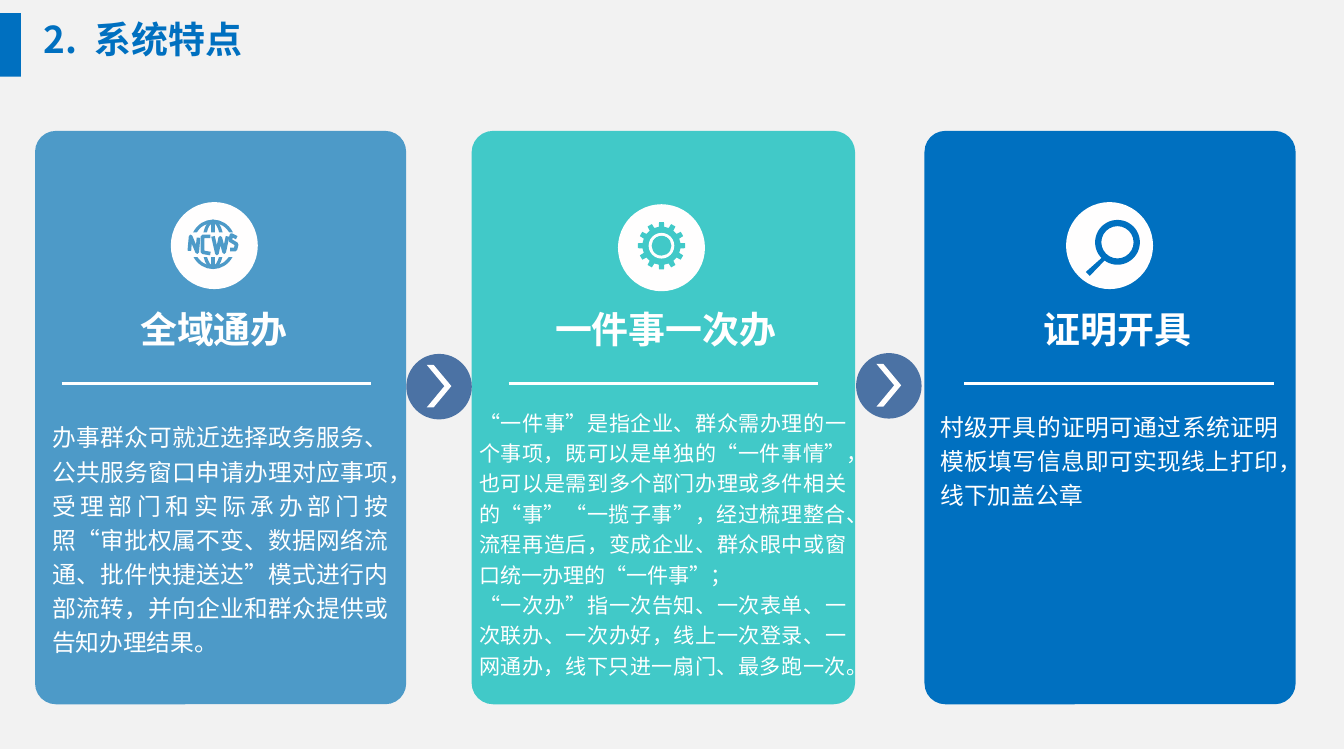
import math

import pptx
import pptx.dml.color
import pptx.enum.shapes
import pptx.enum.text
import pptx.oxml
import pptx.oxml.ns
import pptx.util

Pt = pptx.util.Pt
SHAPE = pptx.enum.shapes.MSO_SHAPE
ALIGN = pptx.enum.text.PP_ALIGN
FONT = "Noto Sans CJK SC"
COLOURS = {
    "background": "F2F2F2", "white": "FFFFFF", "disc": "FFFEFE", "arrow": "4B72A4",
    "sky": "4D9AC8", "teal": "41C9C8", "blue": "0070C0",
}
NEWS = [
    [(-18, 5), (-17, -6), (-12, 6), (-11, -5)],
    [(-2, -6), (-8, -6), (-8, 6), (-2, 7)],
    [(0, -6), (3, 7), (5.5, -5), (8.5, 6), (11, -6)],
    [(18, -5), (14, -7), (13, -3), (18, 0), (17, 4), (13, 4)],
]
HANDLE = [(-18, 20), (-15, 23), (-2, 9.5), (-4.5, 8)]


def rgb(name):
    return pptx.dml.color.RGBColor.from_string(COLOURS[name])


def paint(shape, fill=None, line=None, width=0):
    shape.shadow.inherit = False
    if fill:
        shape.fill.solid()
        shape.fill.fore_color.rgb = rgb(fill)
    else:
        shape.fill.background()
    if line:
        shape.line.color.rgb = rgb(line)
        shape.line.width = Pt(width)
    else:
        shape.line.fill.background()


def add_preset(slide, kind, left, top, width, height, fill, adjustment=None):
    shape = slide.shapes.add_shape(kind, Pt(left), Pt(top), Pt(width), Pt(height))
    if adjustment is not None:
        shape.adjustments[0] = adjustment
    paint(shape, fill)
    return shape


def add_circle(slide, x, y, radius, fill):
    return add_preset(slide, SHAPE.OVAL, x - radius, y - radius, 2 * radius, 2 * radius, fill)


def add_outline(slide, x, y, points, close):
    """Build a freeform from points given relative to (x, y)."""
    corners = [(Pt(x + dx), Pt(y + dy)) for dx, dy in points]
    builder = slide.shapes.build_freeform(*corners[0], scale=1.0)
    builder.add_line_segments(corners[1:], close=close)
    return builder.convert_to_shape()


def add_line(slide, x1, y1, x2, y2, colour, width):
    line = slide.shapes.add_connector(
        pptx.enum.shapes.MSO_CONNECTOR.STRAIGHT, Pt(x1), Pt(y1), Pt(x2), Pt(y2))
    line.line.color.rgb = rgb(colour)
    line.line.width = Pt(width)
    line._element.spPr.append(pptx.oxml.parse_xml(
        f'<a:effectLst {pptx.oxml.ns.nsdecls("a")}/>'))


def format_run(run, size, colour, bold=False):
    run.font.size = Pt(size)
    run.font.bold = bold
    run.font.color.rgb = rgb(colour)
    run.font.name = FONT
    run._r.get_or_add_rPr().append(pptx.oxml.parse_xml(
        f'<a:ea {pptx.oxml.ns.nsdecls("a")} typeface="{FONT}"/>'))


def add_text(slide, left, top, width, height, text, size, align, bold=False):
    box = slide.shapes.add_textbox(Pt(left), Pt(top), Pt(width), Pt(height))
    frame = box.text_frame
    frame.word_wrap = True
    frame.auto_size = pptx.enum.text.MSO_AUTO_SIZE.SHAPE_TO_FIT_TEXT
    frame.text = text
    for paragraph in frame.paragraphs:
        paragraph.alignment = align
        paragraph.line_spacing = 1.2
        format_run(paragraph.runs[0], size, "white", bold)


def globe_icon(slide, x, y, colour):
    x, y = x - 1, y - 1
    for half_width in (16, 7):
        ring = add_preset(slide, SHAPE.OVAL, x - half_width, y - 17.5, 2 * half_width, 35, None)
        paint(ring, line=colour, width=2.5)
    add_line(slide, x, y - 17, x, y + 17, colour, 2.5)
    add_preset(slide, SHAPE.RECTANGLE, x - 20, y - 9, 40, 18.5, "disc")
    for strokes in NEWS:
        paint(add_outline(slide, x, y, strokes, close=False), line=colour, width=2.75)


def gear_icon(slide, x, y, colour):
    y -= 1.5
    teeth = 12
    rim = []
    for tooth in range(teeth):
        for offset, radius in ((-8, 14.5), (-6, 18), (6, 18), (8, 14.5)):
            angle = math.radians(tooth * 360 / teeth + offset)
            rim.append((radius * math.sin(angle), -radius * math.cos(angle)))
    paint(add_outline(slide, x, y, rim, close=True), colour)
    add_circle(slide, x, y, 9.75, "disc")
    add_circle(slide, x, y, 7.5, colour)


def magnifier_icon(slide, x, y, colour):
    add_preset(slide, SHAPE.DONUT, x - 11, y - 19.5, 34, 34, colour, 0.14)
    paint(add_outline(slide, x, y, HANDLE, close=True), colour)


def feature_card(slide, box, colour, icon, disc, heading, heading_x, rule_x, body, body_box, size):
    """Draw one feature; inner places are relative to the card's top left corner."""
    left, top, width, height = box
    add_preset(slide, SHAPE.ROUNDED_RECTANGLE, *box, colour, 0.056)
    disc_x, disc_y = left + disc[0], top + disc[1]
    add_circle(slide, disc_x, disc_y, 33, "disc")
    icon(slide, disc_x, disc_y, colour)
    add_text(slide, left + heading_x - 115, top + 123, 230, 47.5, heading, 28, ALIGN.CENTER, True)
    add_line(slide, left + rule_x, top + 191.5, left + rule_x + 234.7, top + 191.5, "white", 2.25)
    body_x, body_y, body_width, body_height = body_box
    add_text(slide, left + body_x, top + body_y, body_width, body_height, body, size, ALIGN.JUSTIFY)


def step_arrow(slide, left, top):
    add_preset(slide, SHAPE.OVAL, left, top, 49.7, 49.7, "arrow")
    add_preset(slide, SHAPE.CHEVRON, left + 15.5, top + 8.25, 18.7, 32.4, "white", 0.72)


def slide_header(slide, left, top, width, height):
    add_preset(slide, SHAPE.RECTANGLE, 0, 10, 15.8, 48.2, "blue")
    title = slide.shapes.title
    title.left, title.top, title.width, title.height = Pt(left), Pt(top), Pt(width), Pt(height)
    frame = title.text_frame
    frame.margin_left = frame.margin_right = Pt(9.4)
    frame.margin_top = frame.margin_bottom = Pt(5)
    frame.vertical_anchor = pptx.enum.text.MSO_ANCHOR.MIDDLE
    paragraph = frame.paragraphs[0]
    paragraph.alignment = ALIGN.LEFT
    for part in ("2.", " ", "系统特点"):
        run = paragraph.add_run()
        run.text = part
        format_run(run, 28, "blue", True)
    paragraph.runs[1]._r.get_or_add_rPr().set("spc", "650")


def main():
    deck = pptx.Presentation()
    deck.slide_width, deck.slide_height = Pt(1019.5), Pt(568.1)
    slide = deck.slides.add_slide(deck.slide_layouts[5])
    slide.background.fill.solid()
    slide.background.fill.fore_color.rgb = rgb("background")
    slide_header(slide, 23.8, 8.6, 440, 41)

    card_top, card_height = 99.3, 434.9
    feature_card(
        slide, (26.6, card_top, 281.5, card_height), "sky", globe_icon, (136, 87),
        "全域通办", 135.7, 20.2,
        "办事群众可就近选择政务服务、公共服务窗口申请办理对应事项，受理部门和实际承办部门按照"
        "“审批权属不变、数据网络流通、批件快捷送达”模式进行内部流转，并向企业和群众提供或告知办理结果。",
        (5.8, 213.8, 269.3, 190), 18)
    feature_card(
        slide, (357.8, card_top, 290.9, card_height), "teal", gear_icon, (144, 88.6),
        "一件事一次办", 147.2, 28.1,
        "“一件事”是指企业、群众需办理的一个事项，既可以是单独的“一件事情”，也可以是需到多个部门办理或"
        "多件相关的“事”“一揽子事”，经过梳理整合、流程再造后，变成企业、群众眼中或窗口统一办理的“一件事”；\n"
        "“一次办”指一次告知、一次表单、一次联办、一次办好，线上一次登录、一网通办，线下只进一扇门、最多跑一次。",
        (-1.4, 204.5, 293, 216), 16)
    feature_card(
        slide, (701.3, card_top, 281.5, card_height), "blue", magnifier_icon, (140.4, 87),
        "证明开具", 146.5, 30.2,
        "村级开具的证明可通过系统证明模板填写信息即可实现线上打印，线下加盖公章",
        (5, 205.9, 270.7, 85.7), 18)
    step_arrow(slide, 308.2, 268.4)
    step_arrow(slide, 649.4, 267.8)
    deck.save("out.pptx")


if __name__ == "__main__":
    main()
